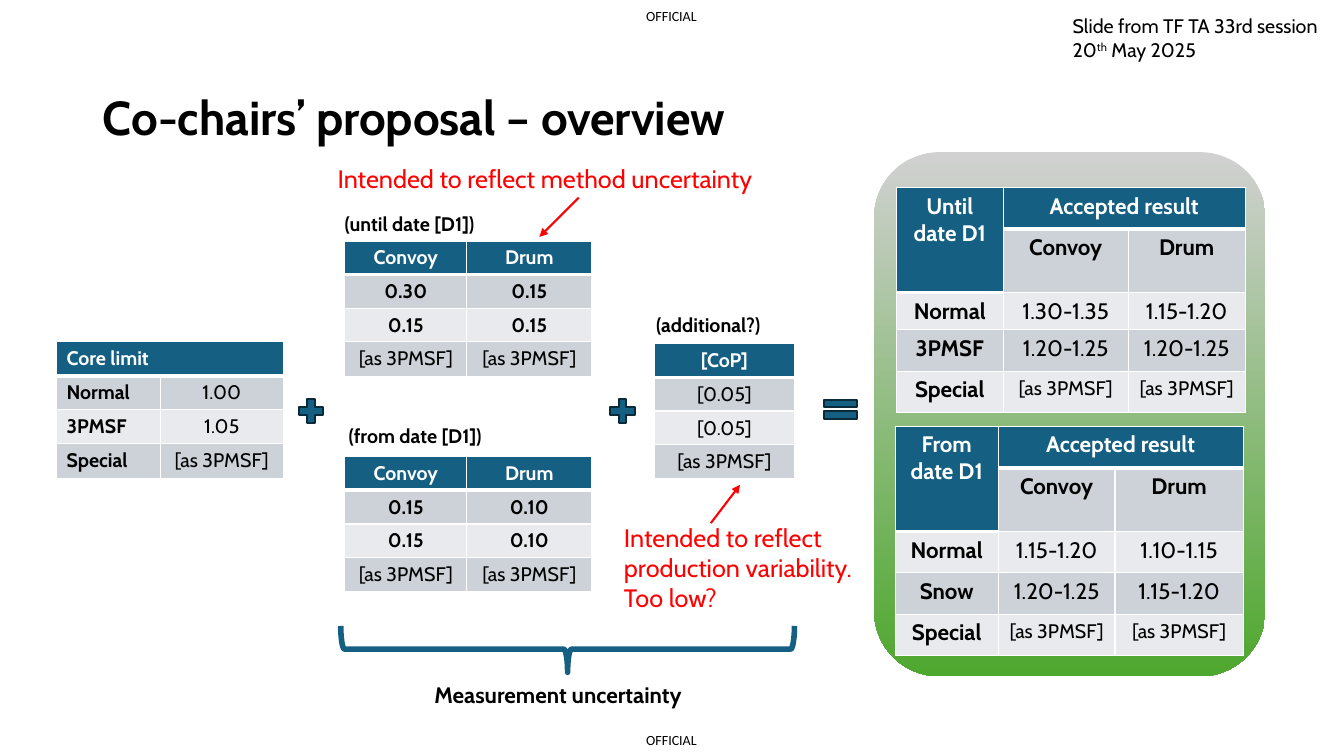
from pptx import Presentation
from pptx.dml.color import RGBColor
from pptx.enum.shapes import MSO_CONNECTOR, MSO_SHAPE
from pptx.enum.text import MSO_AUTO_SIZE, MSO_ANCHOR, PP_ALIGN
from pptx.oxml.ns import qn
from pptx.util import Emu, Pt
from lxml.etree import SubElement

PX = 9144  # 100 px to the inch
FONT = "Cabin"
BLACK = RGBColor(0x00, 0x00, 0x00)
WHITE = RGBColor(0xFF, 0xFF, 0xFF)
RED = RGBColor(0xFF, 0x00, 0x00)
TEAL = RGBColor(0x15, 0x60, 0x82)
DARK_TEAL = RGBColor(0x09, 0x2A, 0x39)
BAND_DARK = RGBColor(0xCC, 0xD2, 0xD8)
BAND_LIGHT = RGBColor(0xE8, 0xEA, 0xED)
GRAY = RGBColor(0xD1, 0xD1, 0xD1)
GREEN = RGBColor(0x4E, 0xA7, 0x2E)


def px(*lengths):
    return [Emu(length * PX) for length in lengths]


def add_run(paragraph, text, size, color=BLACK, bold=False, font=FONT):
    run = paragraph.add_run()
    run.text = text
    run.font.name = font
    run.font.size = Pt(size)
    run.font.bold = bold
    run.font.color.rgb = color
    return run


def add_label(slide, box, lines, size, color=BLACK, bold=False, font=FONT, inset=True):
    frame = slide.shapes.add_textbox(*px(*box)).text_frame
    frame.word_wrap = True
    if not inset:
        frame.margin_left = frame.margin_right = 0
        frame.margin_top = frame.margin_bottom = 0
    for index, line in enumerate(lines):
        paragraph = frame.paragraphs[0] if index == 0 else frame.add_paragraph()
        add_run(paragraph, line, size, color, bold, font)
    return frame


def add_symbol(slide, kind, box):
    shape = slide.shapes.add_shape(kind, *px(*box))
    shape.shadow.inherit = False
    shape.fill.solid()
    shape.fill.fore_color.rgb = TEAL
    shape.line.color.rgb = DARK_TEAL
    shape.line.width = Pt(1.5)


def add_panel(slide, box):
    panel = slide.shapes.add_shape(MSO_SHAPE.ROUNDED_RECTANGLE, *px(*box))
    panel.shadow.inherit = False
    panel.line.fill.background()
    panel.fill.gradient()
    panel.fill.gradient_angle = 270
    for stop, position, color in zip(panel.fill.gradient_stops, (0, 1), (GRAY, GREEN)):
        stop.position = position
        stop.color.rgb = color


def add_brace(slide, box):
    brace = slide.shapes.add_shape(MSO_SHAPE.LEFT_BRACE, *px(*box))
    brace.shadow.inherit = False
    brace.rotation = 270
    brace.fill.background()
    brace.line.color.rgb = TEAL
    brace.line.width = Pt(4)


def add_arrow(slide, *ends):
    arrow = slide.shapes.add_connector(MSO_CONNECTOR.STRAIGHT, *px(*ends))
    arrow.line.color.rgb = RED
    arrow.line.width = Pt(1.5)
    SubElement(arrow.line._get_or_add_ln(), qn("a:tailEnd"), type="triangle")
    SubElement(arrow._element.spPr, qn("a:effectLst"))


def set_borders(cell, top, bottom):
    properties = cell._tc.get_or_add_tcPr()
    for side, points in (("L", 1), ("R", 1), ("T", top), ("B", bottom)):
        line = SubElement(properties, qn(f"a:ln{side}"), w=str(Pt(points)))
        fill = SubElement(line, qn("a:solidFill"))
        SubElement(fill, qn("a:srgbClr"), val=str(WHITE))


def add_grid(slide, left, top, widths, heights, rows, size=14, spans=(),
             bold_values=False, left_labels=False):
    """Banded table; an empty text marks a cell hidden under a merged header."""
    box = px(left, top, sum(widths), sum(heights))
    table = slide.shapes.add_table(len(rows), len(widths), *box).table
    for column, width in zip(table.columns, px(*widths)):
        column.width = width
    for row, height in zip(table.rows, px(*heights)):
        row.height = height
    for r, texts in enumerate(rows):
        for c, text in enumerate(texts):
            cell = table.cell(r, c)
            header = r == 0 or not text
            set_borders(cell, 3 if r == 1 else 1, 3 if header else 1)
            cell.fill.solid()
            band = BAND_DARK if r % 2 else BAND_LIGHT
            cell.fill.fore_color.rgb = TEAL if header else band
            if not text:
                continue
            bracketed = text.startswith("[")
            bold = header or text[-1].isalpha() or (bold_values and not bracketed)
            paragraph = cell.text_frame.paragraphs[0]
            is_left = left_labels and c == 0
            paragraph.alignment = PP_ALIGN.LEFT if is_left else PP_ALIGN.CENTER
            add_run(paragraph, text, 14 if bracketed else size,
                    WHITE if header else BLACK, bold)
    for r, c, last_r, last_c in spans:
        table.cell(r, c).merge(table.cell(last_r, last_c))


def add_uncertainty_grid(slide, top, normal, pmsf):
    rows = [("Convoy", "Drum"), normal, pmsf, ("[as 3PMSF]",) * 2]
    add_grid(slide, 342, top, (121, 124), (33, 33, 33, 34), rows, bold_values=True)


def add_result_grid(slide, left, top, widths, heights, period, *results):
    rows = [(period, "Accepted result", ""), ("", "Convoy", "Drum"), *results,
            ("Special", "[as 3PMSF]", "[as 3PMSF]")]
    add_grid(slide, left, top, widths, heights, rows, size=16,
             spans=[(0, 0, 1, 0), (0, 1, 0, 2)])


def add_title(slide, text):
    title = slide.shapes.title
    title.left, title.top, title.width, title.height = px(92, 82, 1175, 67)
    frame = title.text_frame
    frame.auto_size = MSO_AUTO_SIZE.NONE
    frame.vertical_anchor = MSO_ANCHOR.MIDDLE
    frame.paragraphs[0].alignment = PP_ALIGN.LEFT
    add_run(frame.paragraphs[0], text, 34, bold=True)


def main():
    presentation = Presentation()
    presentation.slide_width, presentation.slide_height = px(1333, 750)
    slide = presentation.slides.add_slide(presentation.slide_layouts[5])

    for top in (7, 726):
        add_label(slide, (641, top, 53, 17), ["OFFICIAL"], 10, font="Calibri", inset=False)
    add_title(slide, "Co-chairs’ proposal – overview")
    add_panel(slide, (867, 151, 388, 520))

    add_grid(slide, 56, 339, (103, 122), (34, 33, 34, 34),
             [("Core limit", ""), ("Normal", "1.00"), ("3PMSF", "1.05"),
              ("Special", "[as 3PMSF]")],
             spans=[(0, 0, 0, 1)], left_labels=True)
    add_uncertainty_grid(slide, 239, ("0.30", "0.15"), ("0.15", "0.15"))
    add_uncertainty_grid(slide, 453, ("0.15", "0.10"), ("0.15", "0.10"))
    add_grid(slide, 649, 341, (139,), (33, 33, 33, 33),
             [("[CoP]",), ("[0.05]",), ("[0.05]",), ("[as 3PMSF]",)])
    add_result_grid(slide, 889, 186, (106, 124, 116), (41, 63, 37, 41, 41),
                    "Until date D1", ("Normal", "1.30-1.35", "1.15-1.20"),
                    ("3PMSF", "1.20-1.25", "1.20-1.25"))
    add_result_grid(slide, 888, 423, (102, 116, 127), (41, 63, 41, 41, 41),
                    "From date D1", ("Normal", "1.15-1.20", "1.10-1.15"),
                    ("Snow", "1.20-1.25", "1.15-1.20"))

    for left in (292, 601):
        add_symbol(slide, MSO_SHAPE.MATH_PLUS, (left, 392, 33, 32))
    add_symbol(slide, MSO_SHAPE.MATH_EQUAL, (811, 390, 45, 32))

    add_label(slide, (332, 205, 162, 34), ["(until date [D1])"], 14, bold=True)
    add_label(slide, (336, 416, 162, 34), ["(from date [D1])"], 14, bold=True)
    add_label(slide, (641, 306, 133, 34), ["(additional?)"], 14, bold=True)
    add_brace(slide, (540, 419, 46, 450))
    add_label(slide, (421, 671, 284, 37), ["Measurement uncertainty"], 16, bold=True)

    add_label(slide, (325, 157, 468, 40), ["Intended to reflect method uncertainty"], 18, RED)
    add_label(slide, (609, 513, 258, 101),
              ["Intended to reflect", "production variability.", "Too low?"], 18, RED)
    add_arrow(slide, 574, 196, 535, 235)
    add_arrow(slide, 705, 519, 734, 481)

    session = add_label(slide, (1054, 9, 268, 57), ["Slide from TF TA 33rd session"], 14)
    date = session.add_paragraph()
    add_run(date, "20", 14)
    ordinal = add_run(date, "th", 14)
    ordinal._r.get_or_add_rPr().set("baseline", "30000")
    add_run(date, " May 2025", 14)

    presentation.save("out.pptx")


if __name__ == "__main__":
    main()
